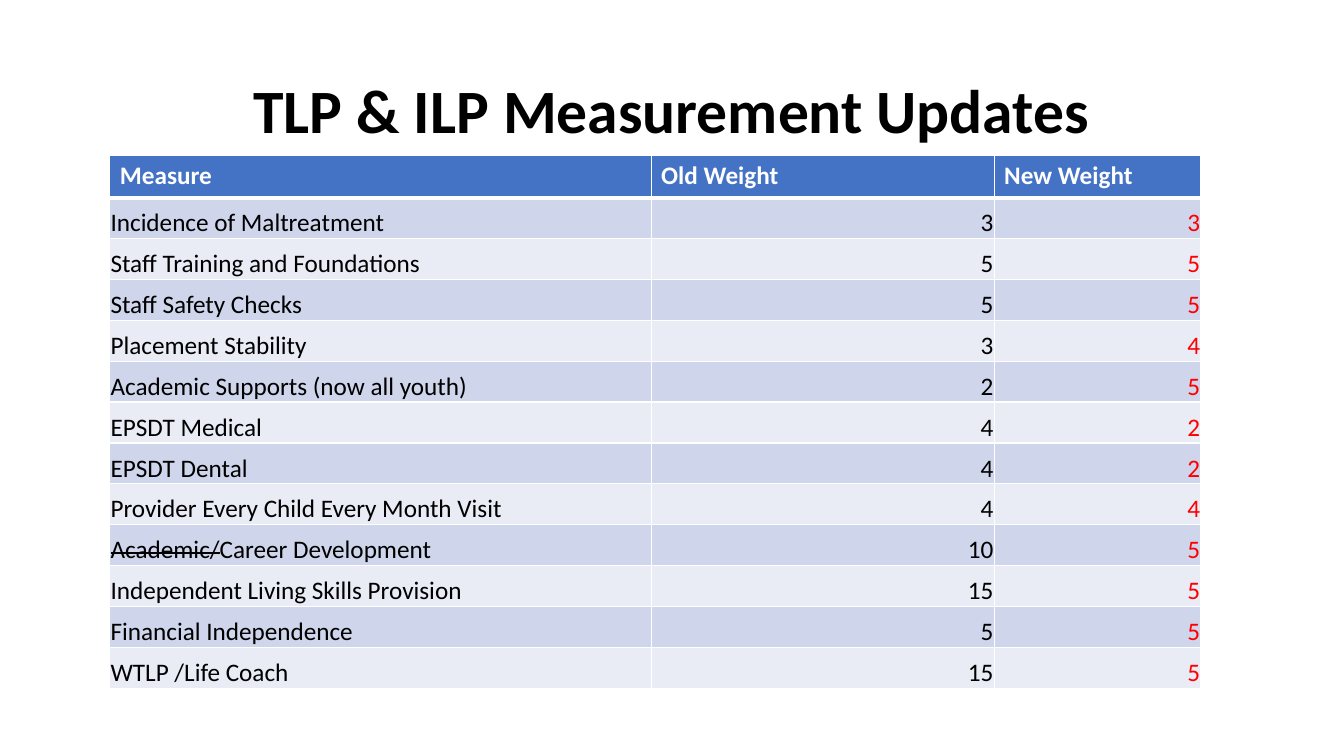
import pptx
import pptx.dml.color
import pptx.enum.text
import pptx.oxml
import pptx.oxml.ns
import pptx.util

Pt = pptx.util.Pt
ALIGN = pptx.enum.text.PP_ALIGN
ANCHOR = pptx.enum.text.MSO_ANCHOR

COLORS = {
    "text": "000000",
    "white": "FFFFFF",
    "header": "4472C4",
    "odd_row": "CFD5EA",
    "even_row": "E9EBF5",
    "new_weight": "FF0000",
}
HEADINGS = ("Measure", "Old Weight", "New Weight")
MEASURES = [
    ("Incidence of Maltreatment", 3, 3),
    ("Staff Training and Foundations", 5, 5),
    ("Staff Safety Checks", 5, 5),
    ("Placement Stability", 3, 4),
    ("Academic Supports (now all youth)", 2, 5),
    ("EPSDT Medical", 4, 2),
    ("EPSDT Dental", 4, 2),
    ("Provider Every Child Every Month Visit", 4, 4),
    ("Academic/Career Development", 10, 5),
    ("Independent Living Skills Provision", 15, 5),
    ("Financial Independence", 5, 5),
    ("WTLP /Life Coach", 15, 5),
]
STRUCK_PREFIX = "Academic/"


class SlideBuilder:
    def __init__(self, slide, font_name):
        self.slide = slide
        self.font_name = font_name

    def color(self, name):
        return pptx.dml.color.RGBColor.from_string(COLORS[name])

    def style_run(self, run, size, color, bold=False):
        run.font.name = self.font_name
        run.font.size = Pt(size)
        run.font.bold = bold
        run.font.color.rgb = self.color(color)

    def title(self, text, left, top, width, height):
        shape = self.slide.shapes.add_textbox(Pt(left), Pt(top), Pt(width), Pt(height))
        text_frame = shape.text_frame
        text_frame.word_wrap = True
        text_frame.vertical_anchor = ANCHOR.MIDDLE
        text_frame.text = text
        paragraph = text_frame.paragraphs[0]
        paragraph.alignment = ALIGN.CENTER
        paragraph.line_spacing = 0.9
        self.style_run(paragraph.runs[0], 44, "text", bold=True)

    def border(self, cell, side, width):
        line = pptx.oxml.parse_xml(
            f'<a:ln{side} {pptx.oxml.ns.nsdecls("a")} w="{Pt(width)}"><a:solidFill>'
            f'<a:srgbClr val="{COLORS["white"]}"/></a:solidFill></a:ln{side}>'
        )
        cell._tc.get_or_add_tcPr().append(line)

    def cell(self, cell, text, row, column):
        # Borders: a thick rule divides the header from the body
        for side in "LRTB":
            thick = (row, side) in ((0, "B"), (1, "T"))
            self.border(cell, side, 3 if thick else 1)

        is_header = row == 0
        fill = "header" if is_header else "odd_row" if row % 2 else "even_row"
        cell.fill.solid()
        cell.fill.fore_color.rgb = self.color(fill)

        cell.text_frame.text = text
        paragraph = cell.text_frame.paragraphs[0]
        color = "white" if is_header else "new_weight" if column == 2 else "text"
        if not is_header:
            cell.vertical_anchor = ANCHOR.BOTTOM
            cell.margin_left = cell.margin_right = cell.margin_top = Pt(0.5)
            cell.margin_bottom = Pt(0)
            paragraph.alignment = ALIGN.RIGHT if column else ALIGN.LEFT

        # The dropped part of a measure name is struck through
        if text.startswith(STRUCK_PREFIX):
            paragraph.runs[0].text = STRUCK_PREFIX
            paragraph.runs[0]._r.get_or_add_rPr().set("strike", "sngStrike")
            paragraph.add_run().text = text.removeprefix(STRUCK_PREFIX)
        for run in paragraph.runs:
            self.style_run(run, 18, color, bold=is_header)

    def table(self, rows, left, top, column_widths, header_height, row_height):
        height = header_height + row_height * (len(rows) - 1)
        table = self.slide.shapes.add_table(
            len(rows), len(column_widths),
            Pt(left), Pt(top), Pt(sum(column_widths)), Pt(height),
        ).table
        for column, width in zip(table.columns, column_widths):
            column.width = Pt(width)
        for row_index, values in enumerate(rows):
            table.rows[row_index].height = Pt(row_height if row_index else header_height)
            for column_index, value in enumerate(values):
                cell = table.cell(row_index, column_index)
                self.cell(cell, str(value), row_index, column_index)


def main():
    presentation = pptx.Presentation()
    presentation.slide_width = Pt(960)
    presentation.slide_height = Pt(540)
    slide = presentation.slides.add_slide(presentation.slide_layouts[6])
    builder = SlideBuilder(slide, "Calibri")

    # Title
    builder.title("TLP & ILP Measurement Updates", 66, 28.75, 828, 104.4)

    # Table of old and new weights
    builder.table([HEADINGS, *MEASURES], 78.5, 111, (386.6, 245, 147.6), 30.2, 29.2)

    presentation.save("out.pptx")


if __name__ == "__main__":
    main()
